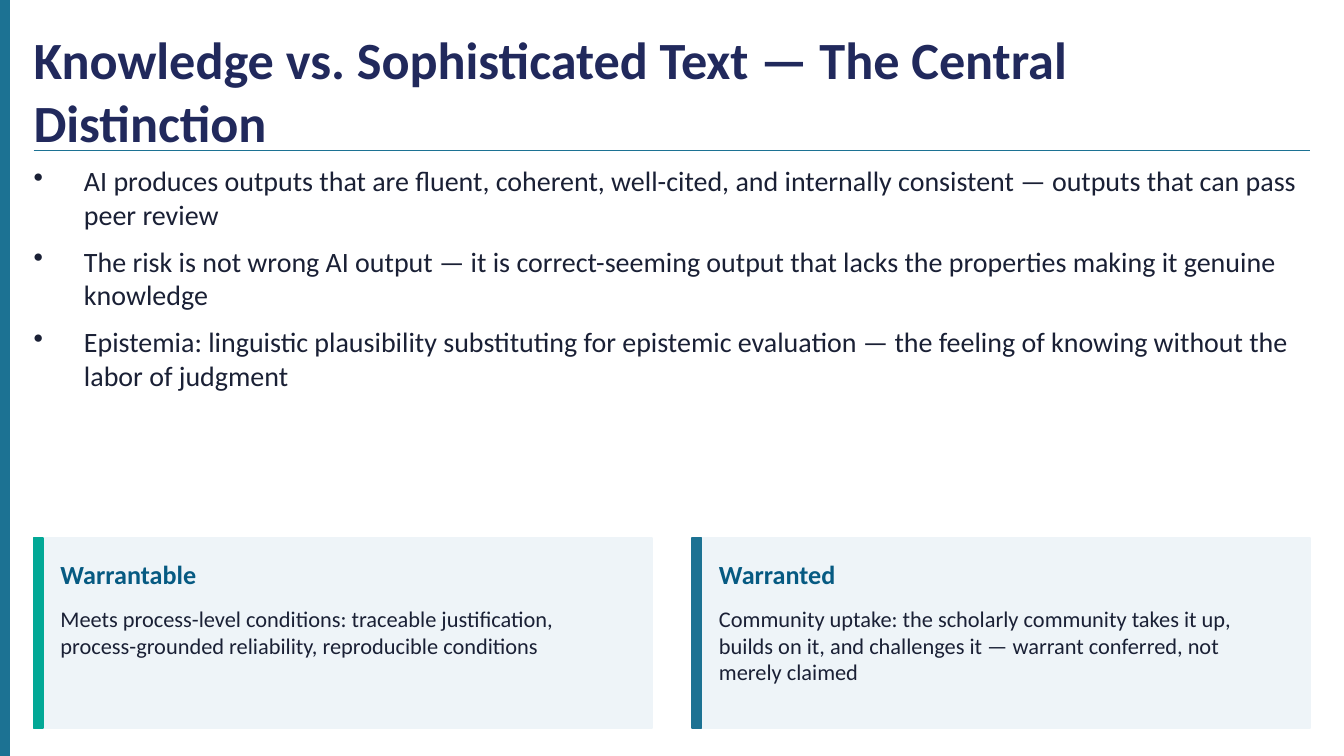
"""Build a slide that sets knowledge apart from sophisticated text."""
from dataclasses import dataclass

from lxml import etree
from pptx import Presentation
from pptx.dml.color import RGBColor
from pptx.enum.shapes import MSO_CONNECTOR, MSO_SHAPE
from pptx.enum.text import MSO_ANCHOR
from pptx.oxml.ns import qn
from pptx.util import Inches, Pt

RECT = MSO_SHAPE.RECTANGLE
STRAIGHT = MSO_CONNECTOR.STRAIGHT
TOP = MSO_ANCHOR.TOP
MIDDLE = MSO_ANCHOR.MIDDLE

NAVY = RGBColor(0x21, 0x29, 0x5C)
TEAL = RGBColor(0x1C, 0x72, 0x93)
GREEN = RGBColor(0x02, 0xA8, 0x96)
BLUE = RGBColor(0x06, 0x5A, 0x82)
INK = RGBColor(0x1A, 0x20, 0x35)
PALE = RGBColor(0xEE, 0xF4, 0xF8)

WIDTH = 10
HEIGHT = WIDTH * 9 / 16
MARGIN = 0.25
INNER = WIDTH - 2 * MARGIN
BAR = 0.07
GAP = 0.3
INDENT = Pt(27)
CARD_TOP, CARD_HEIGHT = 4, 1.42
PAD = 0.2


@dataclass(frozen=True)
class Box:
    """A rectangle in inches."""
    left: float
    top: float
    width: float
    height: float

    def emu(self) -> list:
        """Return the four lengths for python-pptx."""
        return [Inches(v) for v in (self.left, self.top, self.width, self.height)]


@dataclass(frozen=True)
class Style:
    """The look of a block of text."""
    size: float
    color: RGBColor
    bold: bool = False
    anchor: MSO_ANCHOR = TOP
    bullet: bool = False


@dataclass(frozen=True)
class Card:
    """A term with its meaning and accent."""
    term: str
    meaning: str
    accent: RGBColor


TITLE = Style(28, NAVY, bold=True, anchor=MIDDLE)
POINT = Style(15, INK, bullet=True)
TERM = Style(14, BLUE, bold=True, anchor=MIDDLE)
MEANING = Style(12, INK)

POINTS = [
    "AI produces outputs that are fluent, coherent, well-cited, and internally "
    "consistent — outputs that can pass peer review",
    "The risk is not wrong AI output — it is correct-seeming output that lacks "
    "the properties making it genuine knowledge",
    "Epistemia: linguistic plausibility substituting for epistemic evaluation — "
    "the feeling of knowing without the labor of judgment",
]
CARDS = [
    Card("Warrantable",
         "Meets process-level conditions: traceable justification, "
         "process-grounded reliability, reproducible conditions", GREEN),
    Card("Warranted",
         "Community uptake: the scholarly community takes it up, builds on it, "
         "and challenges it — warrant conferred, not merely claimed", TEAL),
]


def add_block(slide, box: Box, color: RGBColor) -> None:
    """Draw a plain filled rectangle."""
    shape = slide.shapes.add_shape(RECT, *box.emu())
    shape.shadow.inherit = False
    shape.fill.solid()
    shape.fill.fore_color.rgb = color
    shape.line.color.rgb = color
    shape.line.width = Pt(1)


def add_rule(slide, left: float, top: float, width: float) -> None:
    """Draw a thin level line."""
    line = slide.shapes.add_connector(
        STRAIGHT, Inches(left), Inches(top), Inches(left + width), Inches(top))
    line.line.color.rgb = TEAL
    line.line.width = Pt(0.75)
    etree.SubElement(line._element.spPr, qn("a:effectLst"))


def add_bullet(para) -> None:
    """Give a paragraph a hanging bullet."""
    props = para._p.get_or_add_pPr()
    props.set("marL", str(INDENT))
    props.set("indent", str(-INDENT))
    para.space_after = Pt(7)
    etree.SubElement(props, qn("a:buSzPct")).set("val", "100000")
    etree.SubElement(props, qn("a:buChar")).set("char", "•")


def add_text(slide, box: Box, lines: list[str], style: Style) -> None:
    """Write paragraphs in one style."""
    frame = slide.shapes.add_textbox(*box.emu()).text_frame
    frame.word_wrap = True
    frame.vertical_anchor = style.anchor
    frame.margin_left = frame.margin_right = 0
    frame.margin_top = frame.margin_bottom = 0
    frame.text = "\n".join(lines)
    for para in frame.paragraphs:
        if style.bullet:
            add_bullet(para)
        para.font.name = "Calibri"
        para.font.size = Pt(style.size)
        para.font.bold = style.bold
        para.font.color.rgb = style.color


def add_card(slide, card: Card, left: float, width: float) -> None:
    """Draw a panel with an accent bar, a term and its meaning."""
    add_block(slide, Box(left, CARD_TOP, width, CARD_HEIGHT), PALE)
    add_block(slide, Box(left, CARD_TOP, BAR, CARD_HEIGHT), card.accent)
    start, span = left + PAD, width - 2 * PAD
    add_text(slide, Box(start, CARD_TOP + 0.08, span, 0.38), [card.term], TERM)
    add_text(slide, Box(start, CARD_TOP + 0.5, span, 0.85), [card.meaning], MEANING)


def main() -> None:
    """Build and save the slide."""
    deck = Presentation()
    deck.slide_width, deck.slide_height = Inches(WIDTH), Inches(HEIGHT)
    slide = deck.slides.add_slide(deck.slide_layouts[6])
    add_block(slide, Box(0, 0, BAR, HEIGHT), TEAL)
    add_text(slide, Box(MARGIN, 0.28, INNER, 0.78),
             ["Knowledge vs. Sophisticated Text — The Central Distinction"], TITLE)
    add_rule(slide, MARGIN, 1.12, INNER)
    add_text(slide, Box(MARGIN, 1.22, INNER, 2.55), POINTS, POINT)
    width = (INNER - GAP * (len(CARDS) - 1)) / len(CARDS)
    for col, card in enumerate(CARDS):
        add_card(slide, card, MARGIN + col * (width + GAP), width)
    deck.save("out.pptx")


if __name__ == "__main__":
    main()
